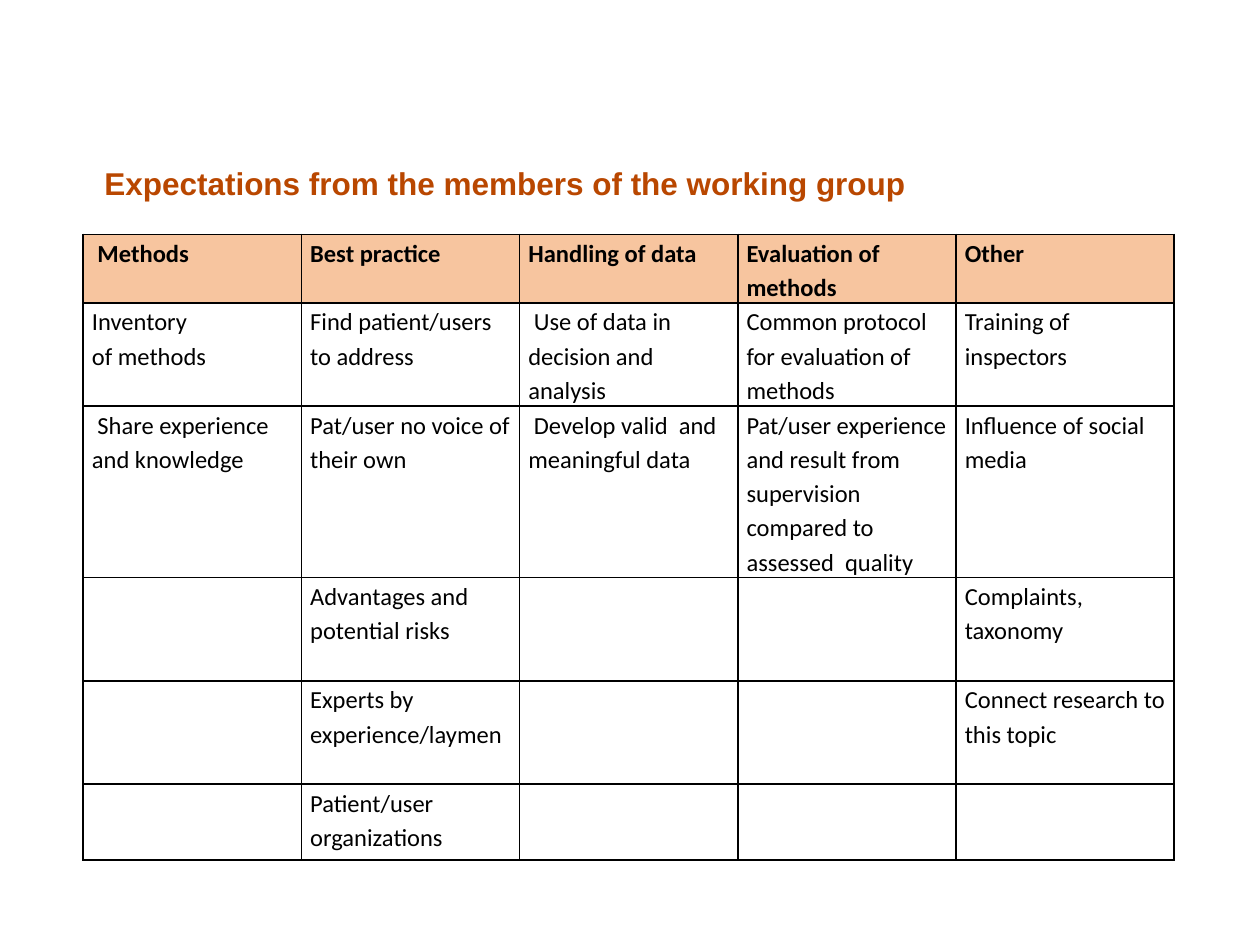
from lxml.etree import SubElement
from pptx import Presentation
from pptx.dml.color import RGBColor
from pptx.enum.text import MSO_AUTO_SIZE
from pptx.oxml.ns import qn
from pptx.util import Inches, Pt

BLACK = RGBColor(0x00, 0x00, 0x00)
RUST = RGBColor(0xB9, 0x47, 0x00)
PEACH = RGBColor(0xF7, 0xC5, 0x9F)

TITLE = "Expectations from the members of the working group"
ROW_HEIGHTS = [0.54, 0.82, 1.36, 0.82, 0.82, 0.6]
# A line break inside a cell starts a new paragraph
EXPECTATIONS = [
    [" Methods", "Best practice", "Handling of data",
     "Evaluation of methods", "Other"],
    ["Inventory\nof methods", "Find patient/users to address",
     " Use of data in decision and analysis",
     "Common protocol for evaluation of methods", "Training of inspectors"],
    [" Share experience and knowledge", "Pat/user no voice of their own",
     " Develop valid  and meaningful data",
     "Pat/user experience and result from supervision compared to "
     "assessed  quality", "Influence of social media"],
    ["", "Advantages and potential risks", "", "", "Complaints, taxonomy"],
    ["", "Experts by experience/laymen", "", "", "Connect research to this topic"],
    ["", "Patient/user organizations", "", "", ""],
]


def add_run(paragraph, text, font_name, size, color, bold):
    run = paragraph.add_run()
    run.text = text
    run.font.name = font_name
    run.font.size = Pt(size)
    run.font.color.rgb = color
    run.font.bold = bold


def add_title(slide, left, top, width, height):
    box = slide.shapes.add_textbox(
        Inches(left), Inches(top), Inches(width), Inches(height))
    frame = box.text_frame
    frame.word_wrap = False
    frame.auto_size = MSO_AUTO_SIZE.SHAPE_TO_FIT_TEXT
    add_run(frame.paragraphs[0], TITLE, "Arial", 18, RUST, True)


def add_borders(cell):
    properties = cell._tc.get_or_add_tcPr()
    for side in ("a:lnL", "a:lnR", "a:lnT", "a:lnB"):
        line = SubElement(properties, qn(side), w=str(Pt(1)))
        fill = SubElement(line, qn("a:solidFill"))
        SubElement(fill, qn("a:srgbClr"), val=str(BLACK))


def fill_cell(cell, text, is_header):
    add_borders(cell)
    if is_header:
        cell.fill.solid()
        cell.fill.fore_color.rgb = PEACH
    else:
        cell.fill.background()
    cell.margin_left = cell.margin_right = Inches(0.07)
    cell.margin_top = cell.margin_bottom = 0
    if not text:
        return
    frame = cell.text_frame
    for index, line in enumerate(text.split("\n")):
        paragraph = frame.add_paragraph() if index else frame.paragraphs[0]
        paragraph.line_spacing = 1.15
        add_run(paragraph, line, "Calibri", 14, BLACK, is_header)


def add_expectations_table(slide, left, top, width):
    column_count = len(EXPECTATIONS[0])
    table = slide.shapes.add_table(
        len(EXPECTATIONS), column_count, Inches(left), Inches(top),
        Inches(width), Inches(sum(ROW_HEIGHTS))).table
    for column in table.columns:
        column.width = Inches(width / column_count)
    for row_index, texts in enumerate(EXPECTATIONS):
        table.rows[row_index].height = Inches(ROW_HEIGHTS[row_index])
        for column_index, text in enumerate(texts):
            fill_cell(table.cell(row_index, column_index), text, row_index == 0)


def main():
    presentation = Presentation()
    presentation.slide_width = Inches(10)
    presentation.slide_height = Inches(7.5)
    slide = presentation.slides.add_slide(presentation.slide_layouts[6])
    add_expectations_table(slide, 0.66, 1.86, 8.66)
    add_title(slide, 0.73, 1.25, 6.7, 0.4)
    presentation.save("out.pptx")


if __name__ == "__main__":
    main()
